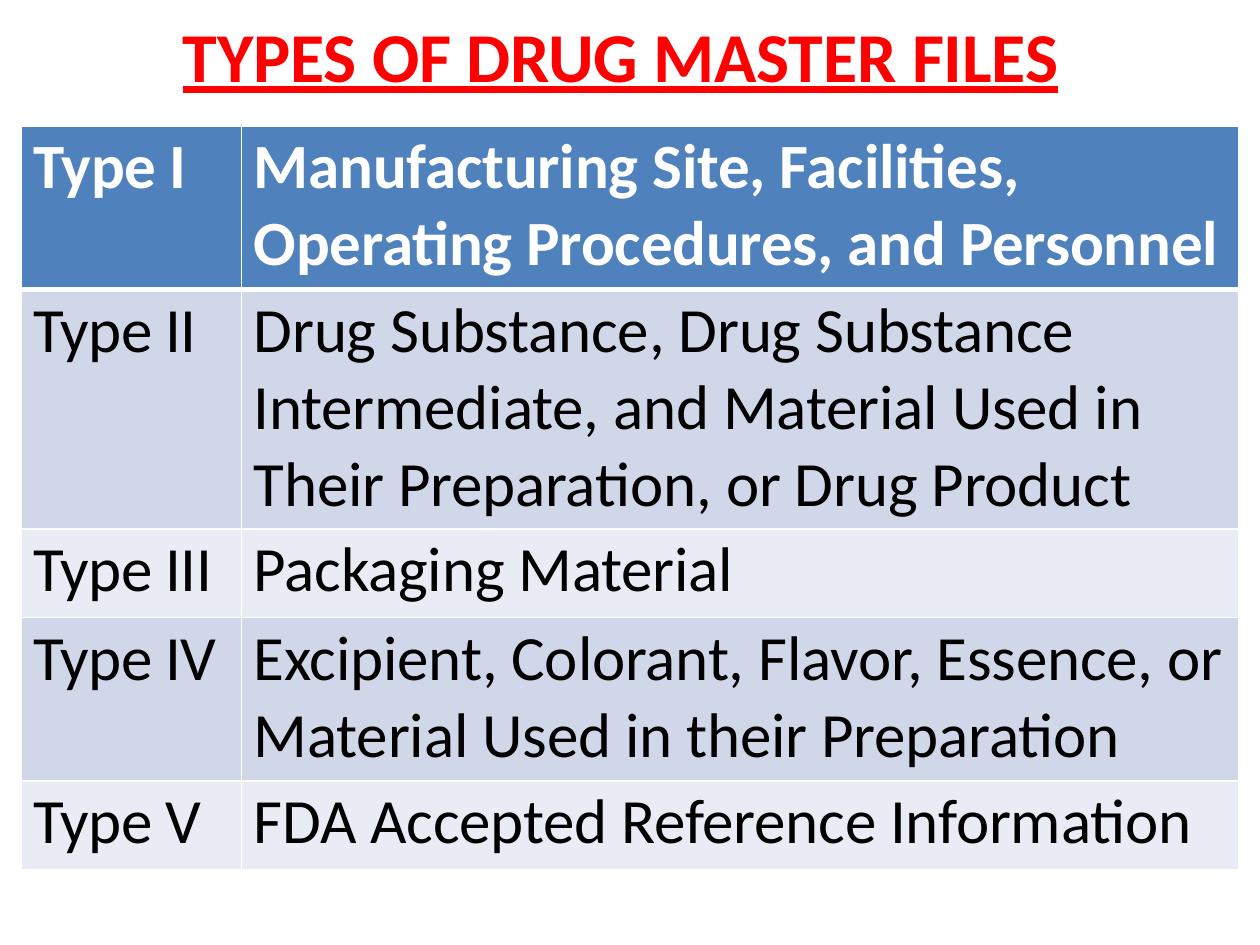
"""Build a slide with a table of the five types of drug master files."""
from lxml import etree
from pptx import Presentation
from pptx.dml.color import RGBColor
from pptx.enum.text import MSO_ANCHOR, PP_ALIGN
from pptx.oxml.ns import qn
from pptx.util import Pt

TOP = MSO_ANCHOR.TOP
LEFT = PP_ALIGN.LEFT
TITLE_ONLY = 5

COLORS = {
    "title": "FF0000",
    "header": "4F81BC",
    "header_text": "FFFFFF",
    "body_text": "000000",
    "band_dark": "D0D7E8",
    "band_light": "E9ECF4",
    "border": "FFFFFF",
}
TITLE_FONT = {"name": "Calibri", "size": Pt(40), "bold": True, "underline": True}
CELL_FONT = {"name": "Calibri", "size": Pt(36)}
TITLE_BOX = {"left": Pt(104.5), "top": Pt(6), "width": Pt(506), "height": Pt(50)}
TITLE_FRAME = {
    "margin_left": 0, "margin_top": Pt(1), "margin_right": 0,
    "margin_bottom": 0, "vertical_anchor": TOP, "word_wrap": True,
}
CELL_FORMAT = {
    "margin_left": Pt(7), "margin_top": Pt(1.5), "margin_right": 0,
    "margin_bottom": 0, "vertical_anchor": TOP,
}
COLUMN_WIDTHS = [126, 570]
ROW_HEIGHTS = [93.6, 136.8, 50.4, 93.6, 50.4]
FILE_TYPES = [
    ("Type I", "Manufacturing Site, Facilities, Operating Procedures, and Personnel"),
    ("Type II", "Drug Substance, Drug Substance Intermediate, and Material Used in "
                "Their Preparation, or Drug Product"),
    ("Type III", "Packaging Material"),
    ("Type IV", "Excipient, Colorant, Flavor, Essence, or Material Used in their "
                "Preparation"),
    ("Type V", "FDA Accepted Reference Information"),
]


def apply_format(target, values):
    """Set each named attribute of the target."""
    for name, value in values.items():
        setattr(target, name, value)


def write_text(frame, text, font, color, space_before, spacing):
    """Write one left-aligned paragraph with letter spacing in 1/100 point."""
    para = frame.paragraphs[0]
    apply_format(para, {"alignment": LEFT, "space_before": Pt(space_before)})
    span = para.add_run()
    span.text = text
    apply_format(span.font, font)
    span.font.color.rgb = RGBColor.from_string(COLORS[color])
    span._r.get_or_add_rPr().set("spc", str(spacing))


def add_title(page, text):
    """Place and format the title placeholder."""
    title = page.shapes.title
    apply_format(title, TITLE_BOX)
    apply_format(title.text_frame, TITLE_FRAME)
    write_text(title.text_frame, text, TITLE_FONT, "title", 1, -10)


def add_borders(cell, widths):
    """Draw solid cell borders with the given width for each side."""
    properties = cell._tc.get_or_add_tcPr()
    for side, width in widths.items():
        line = etree.SubElement(properties, qn(f"a:ln{side}"), w=str(Pt(width)))
        fill = etree.SubElement(line, qn("a:solidFill"))
        etree.SubElement(fill, qn("a:srgbClr"), val=COLORS["border"])


def format_cell(cell, text, row, column):
    """Fill one cell with its text, borders and row colour."""
    header = row == 0
    fill = "header" if header else ("band_light", "band_dark")[row % 2]
    apply_format(cell, CELL_FORMAT)
    add_borders(cell, {"L": 1, "R": 1, "T": 3 if row == 1 else 1,
                       "B": 3 if header else 1})
    cell.fill.solid()
    cell.fill.fore_color.rgb = RGBColor.from_string(COLORS[fill])
    color = "header_text" if header else "body_text"
    write_text(cell.text_frame, text, {**CELL_FONT, "bold": header}, color,
               1.4, -30 if column == 0 else -10)


def add_type_table(page):
    """Add the table of file types."""
    table = page.shapes.add_table(
        len(ROW_HEIGHTS), len(COLUMN_WIDTHS), Pt(12), Pt(72),
        Pt(sum(COLUMN_WIDTHS)), Pt(sum(ROW_HEIGHTS))).table
    for column, width in zip(table.columns, COLUMN_WIDTHS):
        column.width = Pt(width)
    for row, height in zip(table.rows, ROW_HEIGHTS):
        row.height = Pt(height)
    for row, texts in enumerate(FILE_TYPES):
        for column, text in enumerate(texts):
            format_cell(table.cell(row, column), text, row, column)


def main():
    """Build and save the deck."""
    deck = Presentation()
    apply_format(deck, {"slide_width": Pt(720), "slide_height": Pt(540)})
    page = deck.slides.add_slide(deck.slide_layouts[TITLE_ONLY])
    add_title(page, "TYPES OF DRUG MASTER FILES")
    add_type_table(page)
    deck.save("out.pptx")


if __name__ == "__main__":
    main()
